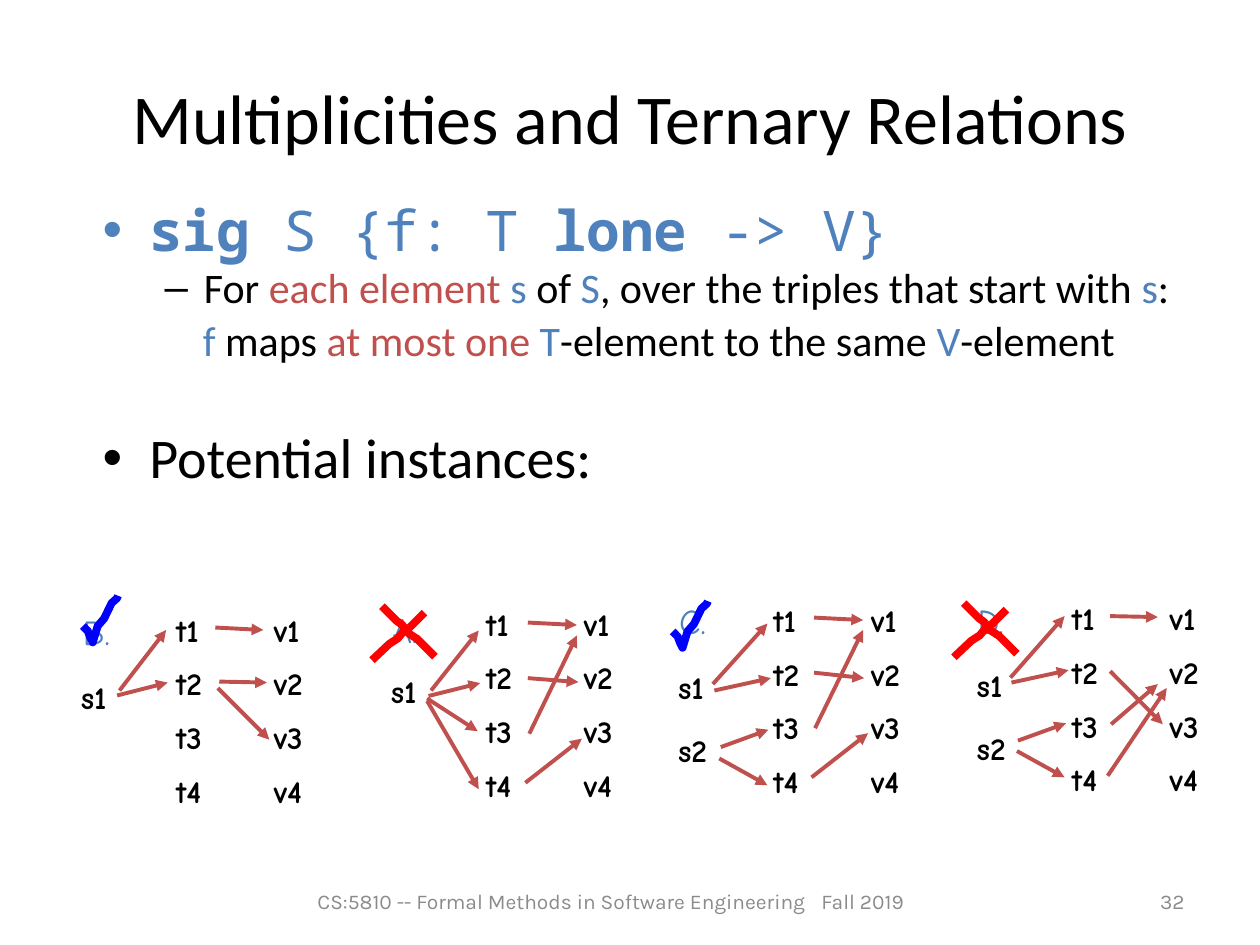
from dataclasses import dataclass

from lxml.etree import SubElement
from pptx import Presentation
from pptx.dml.color import RGBColor
from pptx.enum.shapes import MSO_CONNECTOR as Connector
from pptx.enum.text import MSO_ANCHOR as Anchor, PP_ALIGN as Align
from pptx.oxml.ns import qn
from pptx.util import Cm, Pt


@dataclass(frozen=True)
class Theme:
    """Colours, fonts and type sizes of the slide."""
    ink: str = "000000"
    blue: str = "4F81BD"
    red: str = "C0504D"
    grey: str = "8B8B8B"
    wrong: str = "FF0000"
    right: str = "0000FF"
    sans: str = "Calibri"
    mono: str = "Noto Sans Mono"
    hand: str = "Comic Neue"
    small: str = "Karla"
    title_size: int = 40
    body_size: int = 32
    detail_size: int = 24
    letter_size: int = 20
    atom_size: int = 18
    footer_size: int = 12
    arrow_width: float = 2.25
    mark_width: float = 4.5


THEME = Theme()


@dataclass(frozen=True)
class Line:
    """A body paragraph; runs are (text, colour, bold)."""
    runs: tuple
    margin: float
    indent: float = 0
    size: int = THEME.body_size
    font: str = THEME.sans
    spacing: float = 0.9
    before: float = 6.4
    bullet: str = ""
    level: int = 0


@dataclass(frozen=True)
class Instance:
    """A relation diagram; every offset is in cm from its t1 label."""
    letter: str
    origin: tuple
    letter_at: tuple
    valid: bool
    mark_at: tuple
    sources: int
    arrows: tuple


BODY = (
    Line((("sig", THEME.blue, True), (" S {f: T ", THEME.blue, False),
          ("lone", THEME.blue, True), (" -> V}", THEME.blue, False)),
         0.96, -0.94, font=THEME.mono, bullet="•"),
    Line((("For ", THEME.ink, False), ("each element ", THEME.red, False),
          ("s", THEME.blue, False), (" of ", THEME.ink, False), ("S", THEME.blue, False),
          (", over the triples that start with ", THEME.ink, False),
          ("s", THEME.blue, False), (":", THEME.ink, False)),
         2.06, -0.79, THEME.detail_size, spacing=0.8, before=4.8, bullet="–", level=1),
    Line((("f", THEME.blue, False), (" maps ", THEME.ink, False),
          ("at most one ", THEME.red, False), ("T", THEME.blue, False),
          ("-element to the same ", THEME.ink, False), ("V", THEME.blue, False),
          ("-element", THEME.ink, False)),
         2.04, size=THEME.detail_size, before=4.8),
    Line((("Potential instances:", THEME.ink, False),), 0.96, -0.94, before=36.8, bullet="•"),
)

INSTANCES = (
    Instance("B.", (3.3, 12.19), (-1.88, 0), True, (-1.63, -0.18), 1, (
        (-0.89, 1.73, 0.05, 0.51), (-0.94, 1.83, 0.08, 1.57), (1.04, 0.46, 2.01, 0.51),
        (1.12, 1.55, 2.08, 1.57), (1.09, 1.68, 2.13, 2.72))),
    Instance("A.", (9.55, 12.07), (-1.9, 0.08), False, (-1.85, 0.15), 1, (
        (-0.86, 1.85, 0.1, 0.64), (-0.91, 1.96, 0.13, 1.7), (-0.94, 2.01, 0.08, 2.67),
        (-0.94, 2.06, 0.1, 3.84), (1.09, 0.48, 2.08, 0.53), (1.09, 1.6, 2.11, 1.68),
        (1.12, 2.72, 2.08, 0.74), (1.04, 3.71, 2.18, 2.82))),
    Instance("C.", (15.34, 11.99), (-1.9, -0.03), True, (-1.78, 0.13), 2, (
        (-0.97, 1.8, 0.13, 0.58), (-0.94, 1.93, 0.2, 1.68), (-0.81, 3.07, 0.15, 2.72),
        (-0.84, 3.3, 0.13, 3.84), (1.07, 0.46, 2.06, 0.51), (1.07, 1.57, 2.08, 1.68),
        (1.09, 2.69, 2.06, 0.71), (1.02, 3.68, 2.16, 2.79))),
    Instance("D.", (21.36, 11.96), (-1.9, 0), False, (-1.93, 0.2), 2, (
        (-0.99, 1.7, 0.1, 0.46), (-0.97, 1.8, 0.18, 1.55), (-0.84, 2.97, 0.13, 2.62),
        (-0.86, 3.18, 0.1, 3.71), (1.02, 0.46, 1.98, 0.48), (1.02, 1.57, 2.08, 2.64),
        (1.04, 2.64, 1.98, 1.83), (0.97, 3.68, 2.16, 1.91))),
)

CHECK = (((0, 0.61), (0.1, 0.71), (0.15, 0.84), (0.2, 0.94), (0.3, 0.61),
          (0.43, 0.46), (0.58, 0.15), (0.69, 0.05), (0.71, 0)),)
CROSS = (((0, 0), (0.3, 0.3), (0.41, 0.38), (0.54, 0.55), (0.71, 0.66), (1.07, 1.02)),
         ((0.86, 0.13), (0.56, 0.43), (0.46, 0.48), (0.32, 0.65), (0.15, 0.76), (-0.2, 1.09)))


def write(paragraph, text: str, *, size: float, font: str = THEME.sans,
          color: str = THEME.ink, bold: bool = False, tracking: int = 0) -> None:
    """Append a formatted run to a paragraph."""
    run = paragraph.add_run()
    run.text = text
    run.font.size, run.font.name, run.font.bold = Pt(size), font, bold
    run.font.color.rgb = RGBColor.from_string(color)
    if tracking:
        run.font._element.set("spc", str(tracking))


def add_frame(slide, left: float, top: float, width: float, height: float, wrap: bool = True):
    """Add a text box measured in cm and return its text frame."""
    frame = slide.shapes.add_textbox(Cm(left), Cm(top), Cm(width), Cm(height)).text_frame
    frame.word_wrap = wrap
    return frame


def add_line(paragraph, line: Line) -> None:
    """Format one body paragraph and write its runs."""
    paragraph.level = line.level
    paragraph.line_spacing, paragraph.space_before = line.spacing, Pt(line.before)
    properties = paragraph._p.get_or_add_pPr()
    properties.set("marL", str(Cm(line.margin)))
    properties.set("indent", str(Cm(line.indent)))
    if line.bullet:
        bullet_color = SubElement(properties, qn("a:buClr"))
        SubElement(bullet_color, qn("a:srgbClr"), val=line.runs[0][1])
        SubElement(properties, qn("a:buFont"), typeface="Arial")
        SubElement(properties, qn("a:buChar"), char=line.bullet)
    for text, color, bold in line.runs:
        write(paragraph, text, size=line.size, font=line.font, color=color, bold=bold)


def add_atom(slide, name: str, left: float, top: float) -> None:
    """Add the label of one atom."""
    frame = add_frame(slide, left, top, 1.19, 1.02, wrap=False)
    write(frame.paragraphs[0], name, size=THEME.atom_size, font=THEME.hand, bold=True)


def add_arrow(slide, x1: float, y1: float, x2: float, y2: float) -> None:
    """Add an arrow between two points in cm."""
    arrow = slide.shapes.add_connector(Connector.STRAIGHT, Cm(x1), Cm(y1), Cm(x2), Cm(y2))
    arrow.line.color.rgb = RGBColor.from_string(THEME.red)
    arrow.line.width = Pt(THEME.arrow_width)
    SubElement(arrow.line._get_or_add_ln(), qn("a:tailEnd"), type="triangle")
    SubElement(arrow._element.spPr, qn("a:effectLst"))


def add_mark(slide, valid: bool, left: float, top: float) -> None:
    """Draw a check for a valid instance and a cross for an invalid one."""
    for stroke in CHECK if valid else CROSS:
        points = [(Cm(left + x), Cm(top + y)) for x, y in stroke]
        builder = slide.shapes.build_freeform(*points[0])
        builder.add_line_segments(points[1:], close=False)
        mark = builder.convert_to_shape()
        mark.fill.background()
        mark.line.color.rgb = RGBColor.from_string(THEME.right if valid else THEME.wrong)
        mark.line.width = Pt(THEME.mark_width)
        mark.shadow.inherit = False


def add_instance(slide, instance: Instance) -> None:
    """Draw the atoms, arrows, letter and mark of an instance."""
    left, top = instance.origin
    for row in range(4):
        for column, kind in enumerate("tv"):
            add_atom(slide, f"{kind}{row + 1}", left + 1.97 * column, top + 1.08 * row)
    for row in range(instance.sources):
        add_atom(slide, f"s{row + 1}", left - 1.92, top + 1.35 + 1.27 * row)
    for x1, y1, x2, y2 in instance.arrows:
        add_arrow(slide, left + x1, top + y1, left + x2, top + y2)
    dx, dy = instance.letter_at
    letter = add_frame(slide, left + dx, top + dy, 1.15, 1.09, wrap=False)
    write(letter.paragraphs[0], instance.letter, size=THEME.letter_size,
          font=THEME.hand, color=THEME.blue)
    dx, dy = instance.mark_at
    add_mark(slide, instance.valid, left + dx, top + dy)


def add_footer(slide, left: float, width: float, align, *parts: tuple) -> None:
    """Add a footer box; parts are (text, tracking)."""
    frame = add_frame(slide, left, 17.65, width, 1.02)
    frame.vertical_anchor = Anchor.MIDDLE
    frame.paragraphs[0].alignment = align
    for text, tracking in parts:
        write(frame.paragraphs[0], text, size=THEME.footer_size, font=THEME.small,
              color=THEME.grey, tracking=tracking)


def main() -> None:
    """Build and save the slide."""
    deck = Presentation()
    deck.slide_width, deck.slide_height = Cm(25.4), Cm(19.05)
    slide = deck.slides.add_slide(deck.slide_layouts[5])
    title = slide.shapes.title
    title.left, title.top, title.width, title.height = Cm(1.27), Cm(0.76), Cm(22.86), Cm(3.18)
    title.text_frame.vertical_anchor = Anchor.MIDDLE
    heading = title.text_frame.paragraphs[0]
    heading.alignment = Align.CENTER
    write(heading, "Multiplicities and Ternary Relations", size=THEME.title_size)
    body = add_frame(slide, 1.8, 3.96, 22.33, 7.04)
    for index, line in enumerate(BODY):
        add_line(body.add_paragraph() if index else body.paragraphs[0], line)
    for instance in INSTANCES:
        add_instance(slide, instance)
    add_footer(slide, 5.59, 13.44, Align.CENTER,
               ("CS:5810 -- Formal Methods in Software Engineering", 0), (" ", 600),
               ("Fall 2019", 0))
    add_footer(slide, 20.07, 4.06, Align.RIGHT, ("32", 0))
    deck.save("out.pptx")


if __name__ == "__main__":
    main()
